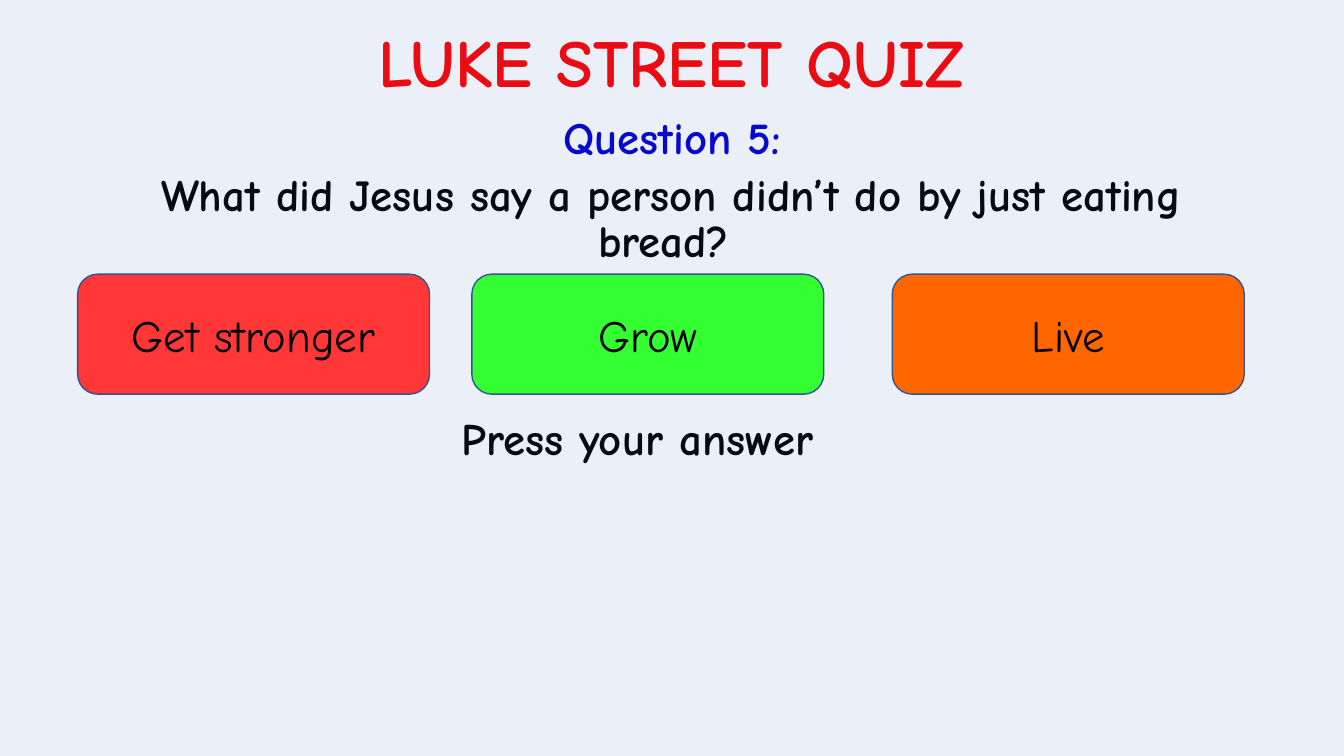
from lxml.etree import SubElement
from pptx import Presentation
from pptx.dml.color import RGBColor
from pptx.enum.shapes import MSO_SHAPE as Shape
from pptx.enum.text import MSO_ANCHOR as Anchor, MSO_AUTO_SIZE as AutoSize, PP_ALIGN as Align
from pptx.oxml.ns import qn
from pptx.util import Inches, Pt

FONT = "Comic Neue"
COLORS = {
    "title": "FF0000",
    "title_outline": "0000FF",
    "question_number": "0000CC",
    "text": "000000",
    "tint": "4472C4",
    "border": "325491",
    "red": "FF3737",
    "green": "33FF33",
    "orange": "FF6600",
}
ANSWERS = [
    ("Get stronger", "red", 0.77),
    ("Grow", "green", 4.68),
    ("Live", "orange", 8.85),
]


def rgb(color):
    return RGBColor.from_string(COLORS[color])


def write(frame, text, color="text", size=32, bold=True, align=Align.CENTER):
    frame.text = text
    paragraph = frame.paragraphs[0]
    paragraph.alignment = align
    font = paragraph.runs[0].font
    font.name = FONT
    font.size = Pt(size)
    font.bold = bold
    font.color.rgb = rgb(color)
    return paragraph


def add_text(slide, box, text, wrap=True, grow=False, **style):
    frame = slide.shapes.add_textbox(*map(Inches, box)).text_frame
    frame.word_wrap = wrap
    frame.auto_size = AutoSize.SHAPE_TO_FIT_TEXT if grow else AutoSize.NONE
    return write(frame, text, **style)


def outline_text(paragraph, color, width):
    properties = paragraph.runs[0].font._element
    outline = SubElement(properties, qn("a:ln"), w=str(Pt(width)))
    fill = SubElement(outline, qn("a:solidFill"))
    SubElement(fill, qn("a:srgbClr"), val=COLORS[color])
    properties.insert(0, outline)


def add_panel(slide, preset, box, color):
    panel = slide.shapes.add_shape(preset, *map(Inches, box))
    panel.shadow.inherit = False
    panel.fill.solid()
    panel.fill.fore_color.rgb = rgb(color)
    panel.line.color.rgb = rgb("border")
    panel.line.width = Pt(1)
    return panel


def add_tint(slide):
    tint = add_panel(slide, Shape.RECTANGLE, (-0.43, -0.61, 14.19, 8.73), "tint")
    color = tint._element.spPr.find(qn("a:solidFill")).find(qn("a:srgbClr"))
    SubElement(color, qn("a:alpha"), val="10000")


def add_answer(slide, text, color, left):
    button = add_panel(slide, Shape.ROUNDED_RECTANGLE, (left, 2.72, 3.49, 1.19), color)
    button.text_frame.vertical_anchor = Anchor.MIDDLE
    write(button.text_frame, text, bold=False)


def main():
    prs = Presentation()
    prs.slide_width, prs.slide_height = Inches(13.33), Inches(7.5)
    slide = prs.slides.add_slide(prs.slide_layouts[6])

    title = add_text(slide, (3.12, 0.15, 7.08, 0.91), "LUKE STREET QUIZ",
                     wrap=False, grow=True, color="title", size=48)
    outline_text(title, "title_outline", 1.06)

    question = add_text(slide, (0.88, 1.68, 11.56, 1.19),
                        "What did Jesus say a person didn’t do by just eating bread? ")
    question.line_spacing = Pt(33)
    question.space_before = Pt(10)

    prompt = add_text(slide, (4.48, 4.09, 6.73, 0.72), "Press your answer", align=Align.LEFT)
    prompt.line_spacing = 0.9
    prompt.space_before = Pt(7.5)

    add_text(slide, (4.46, 1.04, 4.41, 0.64), "Question 5:", grow=True, color="question_number")

    add_tint(slide)
    for text, color, left in ANSWERS:
        add_answer(slide, text, color, left)

    prs.save("out.pptx")


if __name__ == "__main__":
    main()
